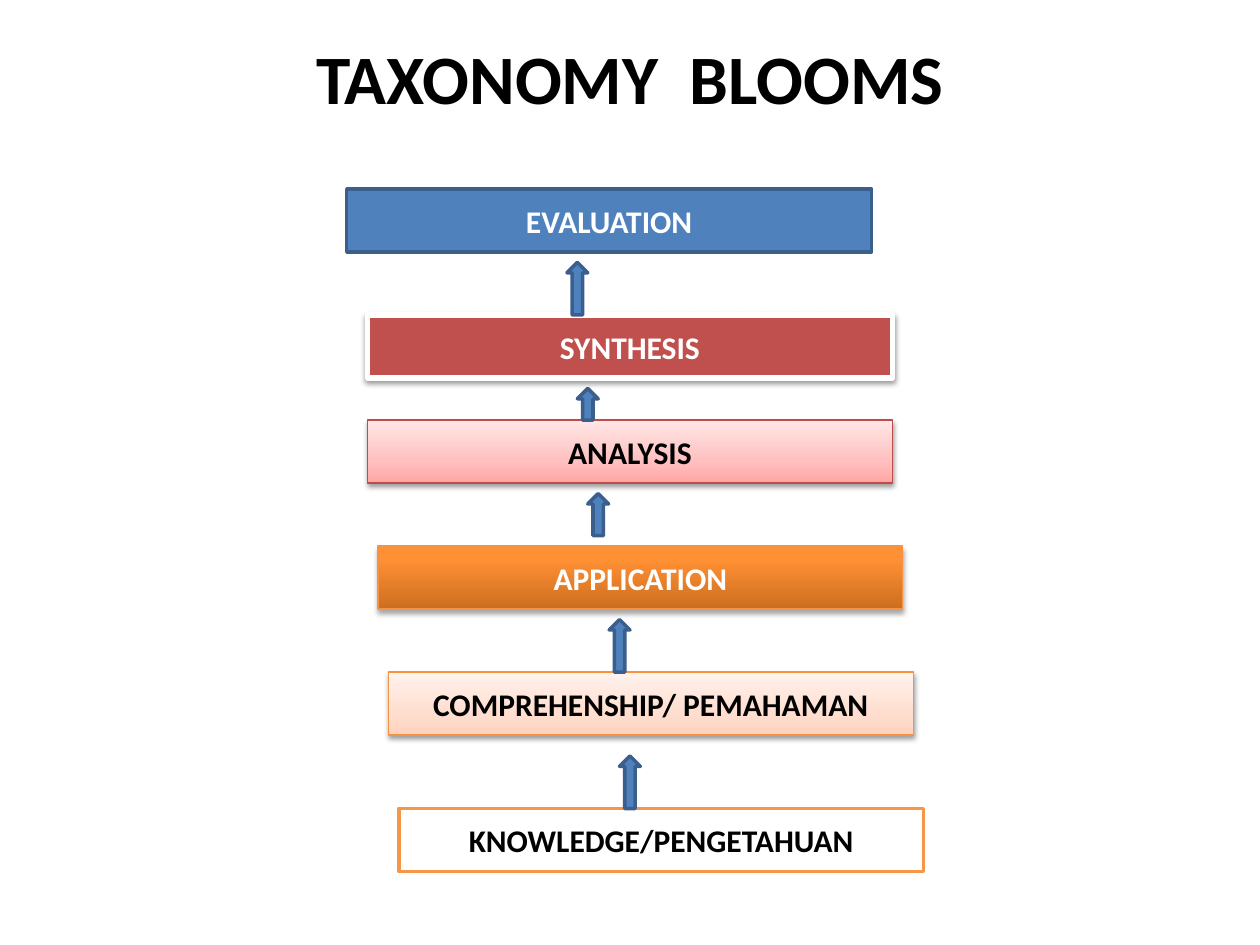
from lxml.etree import SubElement
from pptx import Presentation
from pptx.dml.color import RGBColor
from pptx.enum.shapes import MSO_SHAPE
from pptx.enum.text import MSO_ANCHOR, PP_ALIGN
from pptx.oxml.ns import qn
from pptx.util import Cm, Pt

BLACK = RGBColor(0x00, 0x00, 0x00)
WHITE = RGBColor(0xFF, 0xFF, 0xFF)
BLUE = RGBColor(0x4F, 0x81, 0xBD)
DARK_BLUE = RGBColor(0x3A, 0x5F, 0x8C)
RED = RGBColor(0xC0, 0x50, 0x4D)
DEEP_RED = RGBColor(0xBF, 0x4C, 0x48)
ORANGE = RGBColor(0xF7, 0x96, 0x46)
DEEP_ORANGE = RGBColor(0xF6, 0x92, 0x40)

# Gradients run from bottom to top: (percent, colour)
PINK_GRADIENT = [(0, RGBColor(0xFF, 0xA6, 0xA5)), (35, RGBColor(0xFF, 0xC0, 0xBF)),
                 (100, RGBColor(0xFF, 0xE7, 0xE7))]
ORANGE_GRADIENT = [(0, RGBColor(0xCC, 0x6E, 0x20)), (80, RGBColor(0xFF, 0x90, 0x34)),
                   (100, RGBColor(0xFF, 0x91, 0x36))]
PEACH_GRADIENT = [(0, RGBColor(0xFF, 0xD2, 0xBD)), (35, RGBColor(0xFF, 0xDE, 0xD0)),
                  (100, RGBColor(0xFF, 0xF2, 0xED))]

# Shadows: (opacity percent, blur points, distance points)
SOFT_SHADOW = (38, 3.1, 1.6)
DEEP_SHADOW = (35, 3.1, 1.8)

TITLE = "TAXONOMY  BLOOMS"
FONT = "Calibri"
LEVEL_WIDTH, LEVEL_HEIGHT = 10.58, 1.27
ARROW_WIDTH = 0.42

# text, left, top, fill, line colour, line width, text colour, shadow
LEVELS = [
    ("EVALUATION", 6.99, 3.81, BLUE, DARK_BLUE, 2, WHITE, None),
    ("SYNTHESIS", 7.41, 6.35, RED, WHITE, 3, WHITE, SOFT_SHADOW),
    ("ANALYSIS", 7.41, 8.47, PINK_GRADIENT, DEEP_RED, 0.75, BLACK, SOFT_SHADOW),
    ("APPLICATION", 7.62, 11.01, ORANGE_GRADIENT, DEEP_ORANGE, 0.75, WHITE, DEEP_SHADOW),
    ("COMPREHENSHIP/ PEMAHAMAN", 7.83, 13.55, PEACH_GRADIENT, DEEP_ORANGE, 0.75, BLACK,
     SOFT_SHADOW),
    ("KNOWLEDGE/PENGETAHUAN", 8.04, 16.3, WHITE, ORANGE, 2, BLACK, None),
]
# left, top, height
ARROWS = [
    (12.49, 15.24, 1.06),
    (12.28, 12.49, 1.06),
    (11.85, 9.95, 0.85),
    (11.64, 7.83, 0.64),
    (11.43, 5.29, 1.06),
]


def set_gradient(shape, stops):
    shape.fill.gradient()
    shape.fill.gradient_angle = 90
    stop_list = shape.element.spPr.find(qn("a:gradFill")).find(qn("a:gsLst"))
    for stop in list(stop_list):
        stop_list.remove(stop)
    for percent, color in stops:
        stop = SubElement(stop_list, qn("a:gs"), pos=str(percent * 1000))
        SubElement(stop, qn("a:srgbClr"), val=str(color))


def add_shadow(shape, opacity, blur, distance):
    effects = shape.element.spPr.find(qn("a:effectLst"))
    shadow = SubElement(effects, qn("a:outerShdw"), blurRad=str(Pt(blur)),
                        dist=str(Pt(distance)), dir="5400000", rotWithShape="0")
    color = SubElement(shadow, qn("a:srgbClr"), val=str(BLACK))
    SubElement(color, qn("a:alpha"), val=str(opacity * 1000))


def add_block(slide, kind, left, top, width, height, fill, line_color, line_width):
    shape = slide.shapes.add_shape(kind, Cm(left), Cm(top), Cm(width), Cm(height))
    if isinstance(fill, list):
        set_gradient(shape, fill)
    else:
        shape.fill.solid()
        shape.fill.fore_color.rgb = fill
    shape.line.color.rgb = line_color
    shape.line.width = Pt(line_width)
    shape.shadow.inherit = False
    return shape


def write_text(shape, text, size, color):
    shape.text_frame.vertical_anchor = MSO_ANCHOR.MIDDLE
    paragraph = shape.text_frame.paragraphs[0]
    paragraph.alignment = PP_ALIGN.CENTER
    run = paragraph.add_run()
    run.text = text
    run.font.name = FONT
    run.font.size = Pt(size)
    run.font.bold = True
    run.font.color.rgb = color


def main():
    presentation = Presentation()
    presentation.slide_width, presentation.slide_height = Cm(25.4), Cm(19.05)
    slide = presentation.slides.add_slide(presentation.slide_layouts[5])

    title = slide.shapes.title
    title.left, title.top, title.width, title.height = Cm(1.27), Cm(0.76), Cm(22.86), Cm(1.57)
    write_text(title, TITLE, 39.6, BLACK)

    for text, left, top, fill, line_color, line_width, text_color, shadow in LEVELS:
        level = add_block(slide, MSO_SHAPE.RECTANGLE, left, top, LEVEL_WIDTH, LEVEL_HEIGHT,
                          fill, line_color, line_width)
        write_text(level, text, 18, text_color)
        if shadow:
            add_shadow(level, *shadow)

    for left, top, height in ARROWS:
        add_block(slide, MSO_SHAPE.UP_ARROW, left, top, ARROW_WIDTH, height,
                  BLUE, DARK_BLUE, 2)

    presentation.save("out.pptx")


if __name__ == "__main__":
    main()
